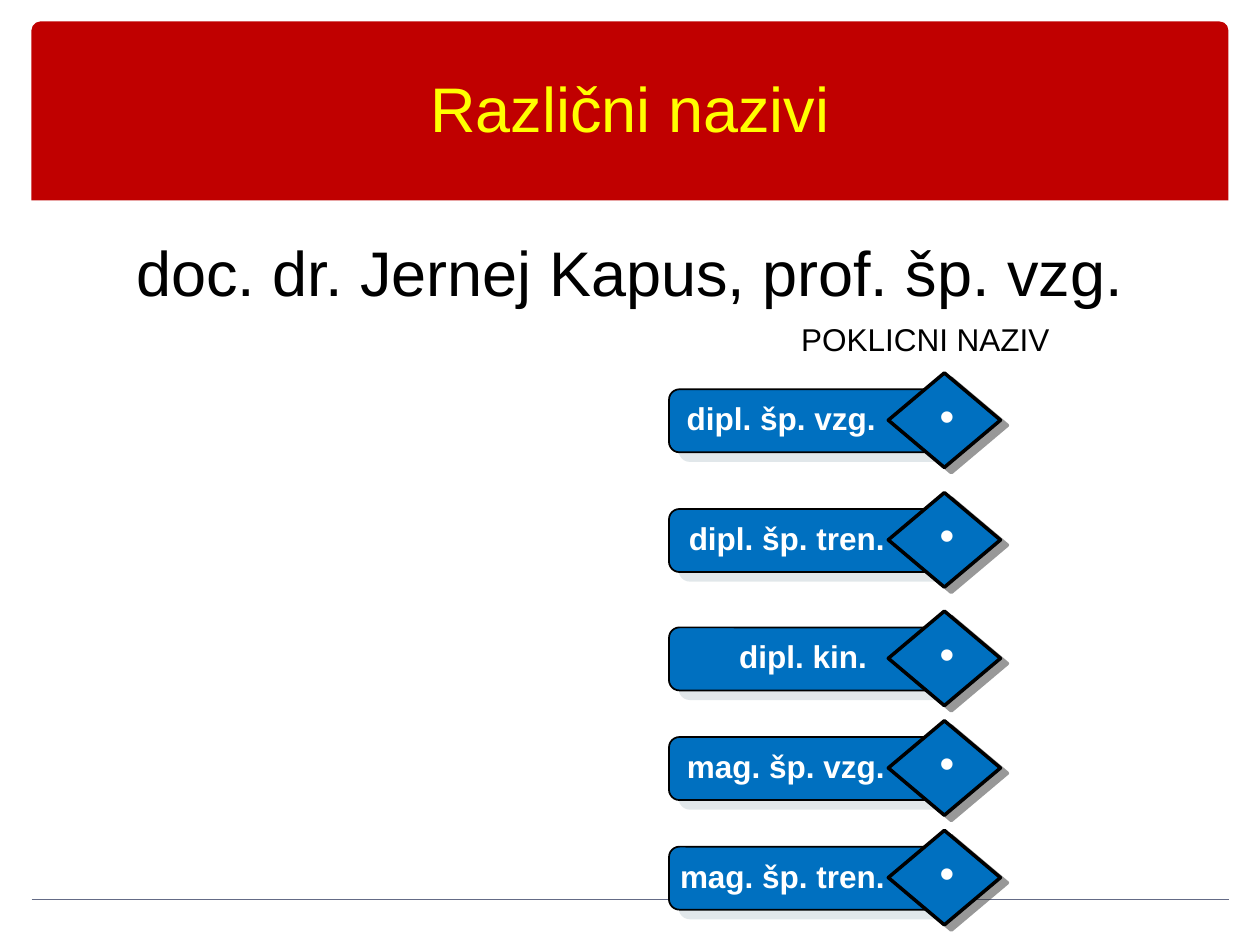
from lxml.etree import SubElement
from pptx import Presentation
from pptx.dml.color import RGBColor
from pptx.enum.shapes import MSO_CONNECTOR, MSO_SHAPE
from pptx.enum.text import MSO_ANCHOR, PP_ALIGN
from pptx.oxml.ns import qn
from pptx.util import Inches, Pt

COLORS = {
    "banner": "C00000", "title": "FFFF00", "rule": "646B86", "blue": "0070C0",
    "black": "000000", "white": "FFFFFF",
    "pill_shadow": "C5D1D7", "diamond_shadow": "333333",
}

# Label, top of its pill, right inset of its text
DEGREES = [
    ("dipl. šp. vzg.", 3.09, 0.17),
    ("dipl. šp. tren.", 4.04, 0.1),
    ("dipl. kin.", 4.98, 0.24),
    ("mag. šp. vzg.", 5.85, 0.1),
    ("mag. šp. tren.", 6.72, 0.1),
]


def color(name):
    return RGBColor.from_string(COLORS[name])


def add_text(slide, text, left, top, width, height, *, size=18, fill="black", bold=False,
             align=PP_ALIGN.LEFT, anchor=MSO_ANCHOR.TOP, wrap=True,
             top_inset=0.05, right_inset=0.1):
    box = slide.shapes.add_textbox(Inches(left), Inches(top), Inches(width), Inches(height))
    frame = box.text_frame
    frame.word_wrap = wrap
    frame.vertical_anchor = anchor
    frame.margin_top = Inches(top_inset)
    frame.margin_right = Inches(right_inset)
    paragraph = frame.paragraphs[0]
    paragraph.alignment = align
    run = paragraph.add_run()
    run.text = text
    run.font.name = "Arial"
    run.font.size = Pt(size)
    run.font.bold = bold
    run.font.color.rgb = color(fill)


def add_block(slide, kind, left, top, width, height, fill, line_width=None):
    shape = slide.shapes.add_shape(kind, Inches(left), Inches(top), Inches(width), Inches(height))
    shape.fill.solid()
    shape.fill.fore_color.rgb = color(fill)
    if line_width is None:
        shape.line.fill.background()
    else:
        shape.line.color.rgb = color("black")
        shape.line.width = Pt(line_width)
    shape.shadow.inherit = False
    return shape


def cast_shadow(shape, name, distance, degrees):
    """Add a sharp, half transparent shadow; distance is in points."""
    effects = shape.element.spPr.find(qn("a:effectLst"))
    shadow = SubElement(effects, qn("a:outerShdw"), blurRad="0", dist=str(Pt(distance)),
                        dir=str(degrees * 60000), algn="ctr", rotWithShape="0")
    shade = SubElement(shadow, qn("a:srgbClr"), val=COLORS[name])
    SubElement(shade, qn("a:alpha"), val="50000")


def add_rule(slide, left, right, top):
    rule = slide.shapes.add_connector(MSO_CONNECTOR.STRAIGHT, Inches(left), Inches(top),
                                      Inches(right), Inches(top))
    rule.line.color.rgb = color("rule")
    rule.line.width = Pt(1)
    SubElement(rule.element.spPr, qn("a:effectLst"))


def add_degree(slide, label, top, right_inset):
    """Draw a pill with its label and a diamond over its right end."""
    pill = add_block(slide, MSO_SHAPE.ROUNDED_RECTANGLE, 5.31, top, 2.2, 0.5, "blue", 1)
    cast_shadow(pill, "pill_shadow", 7.8, 40)
    diamond = add_block(slide, MSO_SHAPE.DIAMOND, 7.05, top - 0.13, 0.89, 0.75, "blue", 2)
    cast_shadow(diamond, "diamond_shadow", 5, 37)
    add_text(slide, label, 5.24, top + 0.03, 1.88, 0.4, fill="white", bold=True,
             align=PP_ALIGN.RIGHT, right_inset=right_inset)
    add_text(slide, "•", 7.36, top - 0.05, 0.35, 0.5, size=24, fill="white", wrap=False)


def main():
    presentation = Presentation()
    presentation.slide_width = Inches(10)
    presentation.slide_height = Inches(7.5)
    slide = presentation.slides.add_slide(presentation.slide_layouts[6])

    banner = add_block(slide, MSO_SHAPE.ROUND_2_SAME_RECTANGLE, 0.25, 0.17, 9.5, 1.42, "banner")
    banner.adjustments[0] = 0.05
    add_rule(slide, 0.25, 9.75, 7.14)
    add_text(slide, "Različni nazivi", 0.5, 0.17, 9, 1.37, size=36, fill="title",
             align=PP_ALIGN.CENTER, anchor=MSO_ANCHOR.MIDDLE)
    add_text(slide, "doc. dr. Jernej Kapus, prof. šp. vzg.", 0.5, 1.75, 9, 0.82, size=36,
             align=PP_ALIGN.CENTER, top_inset=0.1)
    add_text(slide, "POKLICNI NAZIV", 6.26, 2.49, 2.17, 0.4, wrap=False)
    for label, top, right_inset in DEGREES:
        add_degree(slide, label, top, right_inset)

    presentation.save("out.pptx")


if __name__ == "__main__":
    main()
